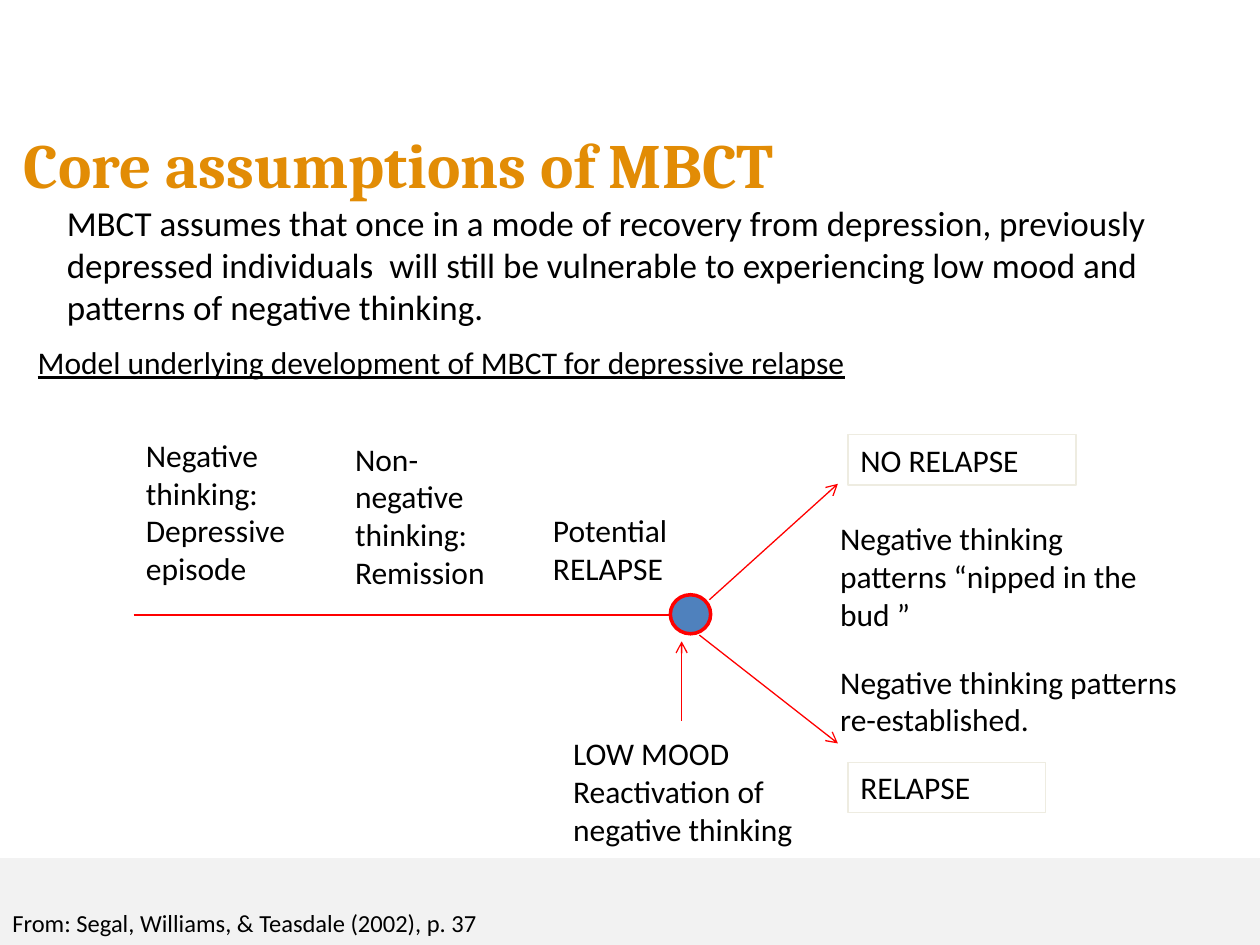
from lxml.etree import SubElement
from pptx import Presentation
from pptx.dml.color import RGBColor
from pptx.enum.shapes import MSO_CONNECTOR as CONNECTOR, MSO_SHAPE as SHAPE
from pptx.enum.text import MSO_ANCHOR as ANCHOR, MSO_AUTO_SIZE as AUTO_SIZE, PP_ALIGN as ALIGN
from pptx.oxml.ns import qn
from pptx.util import Inches, Pt

RED = "FF0000"


def color(value):
    return RGBColor.from_string(value)


def write(shape, lines, size, ink="000000", font="Calibri", anchor=ANCHOR.TOP):
    frame = shape.text_frame
    frame.word_wrap = True
    frame.auto_size = AUTO_SIZE.NONE
    frame.vertical_anchor = anchor
    frame.text = "\n".join(lines)
    for paragraph in frame.paragraphs:
        paragraph.alignment = ALIGN.LEFT
        paragraph.space_before = Pt(0)
        paragraph.font.size = Pt(size)
        paragraph.font.name = font
        paragraph.font.color.rgb = color(ink)
    return frame.paragraphs[0]


prs = Presentation()
prs.slide_width, prs.slide_height = Inches(10), Inches(7.5)
slide = prs.slides.add_slide(prs.slide_layouts[1])
shapes = slide.shapes

# Title and opening statement
title, statement = shapes.title, slide.placeholders[1]
for holder, box in ((title, (0.09, 0.94, 9.84, 0.71)),
                    (statement, (0.43, 1.55, 9.06, 1.1))):
    holder.left, holder.top, holder.width, holder.height = map(Inches, box)
heading = write(title, ["Core assumptions of MBCT"], 36, "E28C05", "Cambria", ANCHOR.MIDDLE)
heading.font.bold = True
assumption = write(statement, [
    "MBCT assumes that once in a mode of recovery from depression, previously "
    "depressed individuals  will still be vulnerable to experiencing low mood "
    "and patterns of negative thinking."], 20)
properties = assumption._p.get_or_add_pPr()
properties.set("marL", "0")
properties.set("indent", "0")
properties.insert_element_before(properties.makeelement(qn("a:buNone")), "a:tabLst", "a:defRPr")

# Footer band
band = shapes.add_shape(SHAPE.RECTANGLE, 0, Inches(6.81), Inches(10), Inches(0.69))
band.shadow.inherit = False
band.fill.solid()
band.fill.fore_color.rgb = color("F2F2F2")
band.line.fill.background()

# Timeline, the two outcomes and the trigger
for x1, y1, x2, y2, has_arrow in (
    (1.06, 4.88, 5.31, 4.88, False),
    (5.63, 4.76, 6.65, 3.84, True),
    (5.55, 5.04, 6.65, 5.9, True),
    (5.41, 5.72, 5.41, 5.09, True),
):
    path_line = shapes.add_connector(CONNECTOR.STRAIGHT, *map(Inches, (x1, y1, x2, y2)))
    path_line.line.color.rgb = color(RED)
    path_line.line.width = Pt(0.75)
    if has_arrow:
        SubElement(path_line.line._get_or_add_ln(), qn("a:tailEnd"), type="arrow")
    SubElement(path_line._element.spPr, qn("a:effectLst"))

# Branching point
branch = shapes.add_shape(SHAPE.OVAL, Inches(5.32), Inches(4.72), Inches(0.32), Inches(0.31))
branch.shadow.inherit = False
branch.fill.solid()
branch.fill.fore_color.rgb = color("4F81BD")
branch.line.color.rgb = color(RED)
branch.line.width = Pt(2)

# Stage descriptions and source
for box, lines, size in (
    ((1.06, 3.41, 1.34, 1.31), ["Negative thinking:", "Depressive episode"], 18),
    ((2.72, 3.44, 1.34, 1.31), ["Non-negative thinking:", "Remission"], 18),
    ((4.29, 4.01, 1.42, 0.71), ["Potential RELAPSE"], 18),
    ((4.45, 5.78, 2.05, 1.01), ["LOW MOOD", "Reactivation of negative thinking"], 18),
    ((6.57, 4.07, 2.6, 1.01), ["Negative thinking patterns “nipped in the bud ”"], 18),
    ((6.57, 5.21, 2.91, 0.71), ["Negative thinking patterns re-established."], 18),
    ((0, 7.16, 4.37, 0.34), ["From: Segal, Williams, & Teasdale (2002), p. 37"], 14),
):
    write(shapes.add_textbox(*map(Inches, box)), lines, size)

# Model heading
model_box = shapes.add_textbox(Inches(0.2), Inches(2.67), Inches(7.48), Inches(0.4))
model = write(model_box, ["Model underlying development of MBCT for depressive relapse"], 18)
model.font.underline = True

# Outcome boxes
for top, width, label in ((6.05, 1.57, "RELAPSE"), (3.45, 1.81, "NO RELAPSE")):
    outcome = shapes.add_shape(SHAPE.RECTANGLE, Inches(6.73), Inches(top), Inches(width), Inches(0.4))
    outcome.shadow.inherit = False
    outcome.fill.background()
    outcome.line.color.rgb = color("EEECE1")
    outcome.line.width = Pt(0.75)
    write(outcome, [label], 18)

prs.save("out.pptx")
